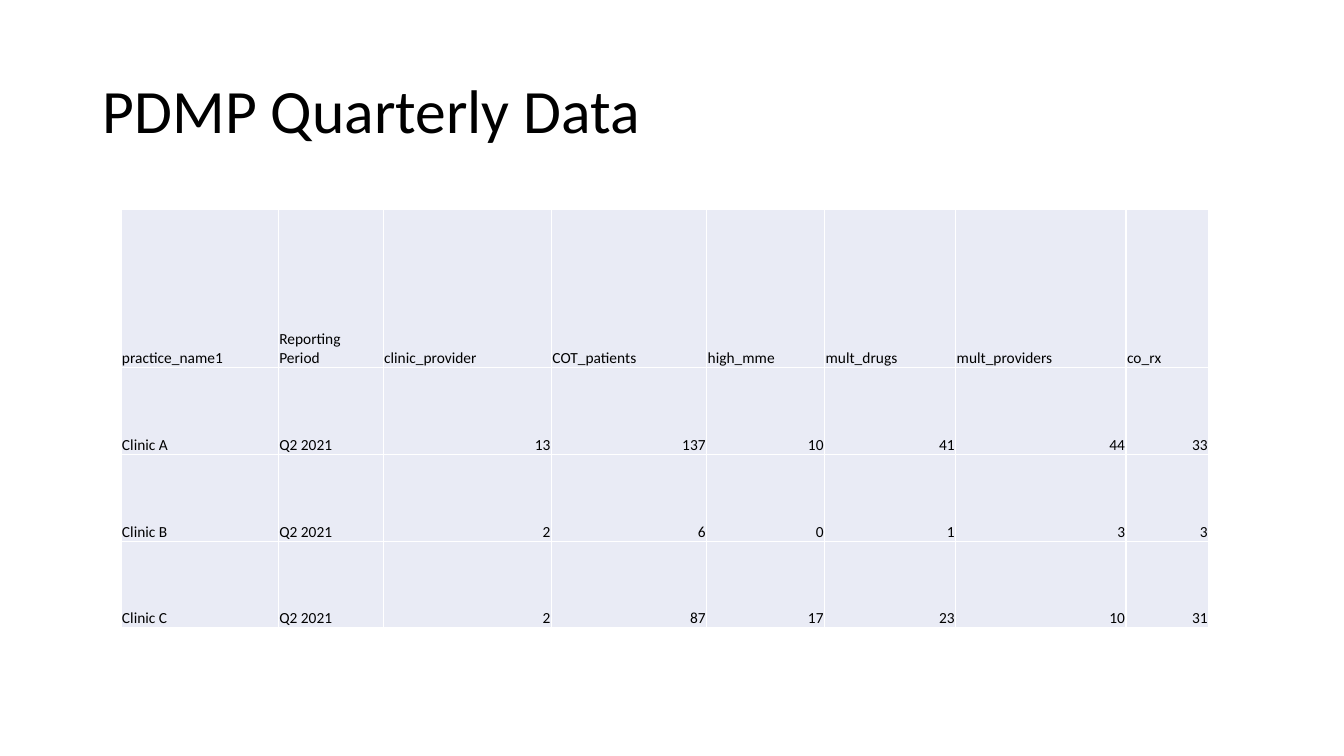
from pptx import Presentation, util as u
from pptx.dml import color
from pptx.enum import text
from pptx.oxml import ns, xmlchemy


def paint(target, value):
    """Give a font colour or a fill the hex colour."""
    target.rgb = color.RGBColor.from_string(value)


def write(paragraph, wording, size):
    run = paragraph.add_run()
    run.text = wording
    run.font.name = "Calibri"
    run.font.size = u.Pt(size)
    paint(run.font.color, "000000")


deck = Presentation()
deck.slide_width, deck.slide_height = u.Inches(13.33), u.Inches(7.5)
slide = deck.slides.add_slide(deck.slide_layouts[5])

# Title
title = slide.shapes.title
title.left, title.top = u.Inches(0.92), u.Inches(0.4)
title.width, title.height = u.Inches(11.5), u.Inches(1.45)
title.text_frame.vertical_anchor = text.MSO_ANCHOR.MIDDLE
heading = title.text_frame.paragraphs[0]
heading.alignment = text.PP_ALIGN.LEFT
heading.line_spacing = 0.9
write(heading, "PDMP Quarterly Data", 44)

# Quarterly figures by clinic
quarter = "Q2 2021"
records = [
    ["practice_name1", "Reporting Period", "clinic_provider", "COT_patients",
     "high_mme", "mult_drugs", "mult_providers", "co_rx"],
    ["Clinic A", quarter, 13, 137, 10, 41, 44, 33],
    ["Clinic B", quarter, 2, 6, 0, 1, 3, 3],
    ["Clinic C", quarter, 2, 87, 17, 23, 10, 31],
]
column_widths = [1.56, 1.04, 1.67, 1.54, 1.17, 1.3, 1.69, 0.82]
row_heights = [1.57] + [0.86] * 3

clinics = slide.shapes.add_table(
    len(records), len(column_widths), u.Inches(1.2), u.Inches(2.08),
    u.Inches(sum(column_widths)), u.Inches(sum(row_heights))).table
clinics.first_row = clinics.horz_banding = False
for column, width in zip(clinics.columns, column_widths):
    column.width = u.Inches(width)

for row, height, record in zip(clinics.rows, row_heights, records):
    row.height = u.Inches(height)
    for cell, value in zip(row.cells, record):
        cell.vertical_anchor = text.MSO_ANCHOR.BOTTOM
        cell.margin_left = cell.margin_right = cell.margin_top = u.Inches(0.01)
        cell.margin_bottom = 0
        entry = cell.text_frame.paragraphs[0]
        if isinstance(value, int):
            entry.alignment = text.PP_ALIGN.RIGHT
        write(entry, str(value), 11)

        # White rules come before the fill in the cell properties
        properties = cell._tc.get_or_add_tcPr()
        for side in ("lnL", "lnR", "lnT", "lnB"):
            rule = xmlchemy.OxmlElement("a:" + side)
            rule.set("w", str(u.Pt(1)))
            solid = xmlchemy.OxmlElement("a:solidFill")
            white = xmlchemy.OxmlElement("a:srgbClr")
            white.set("val", "FFFFFF")
            solid.append(white)
            rule.append(solid)
            properties.append(rule)
        cell.fill.solid()
        paint(cell.fill.fore_color, "E9EBF5")

deck.save("out.pptx")
